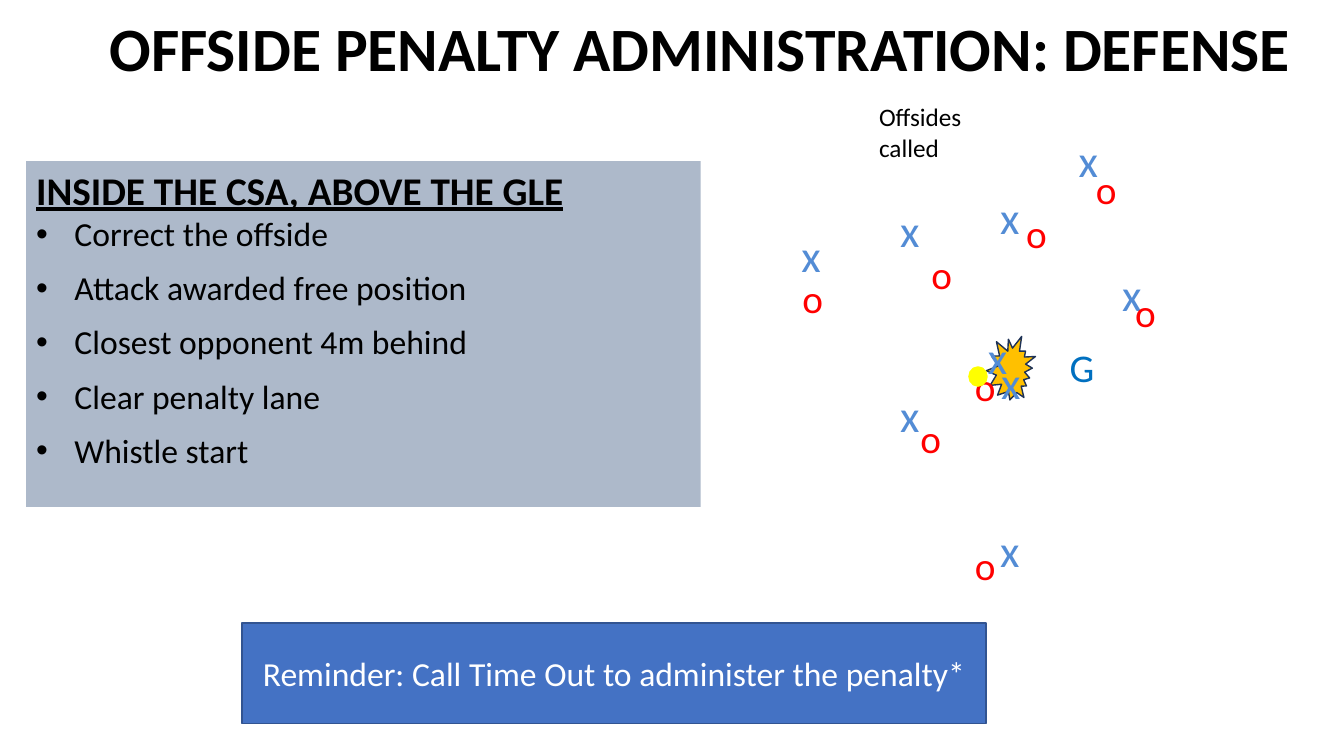
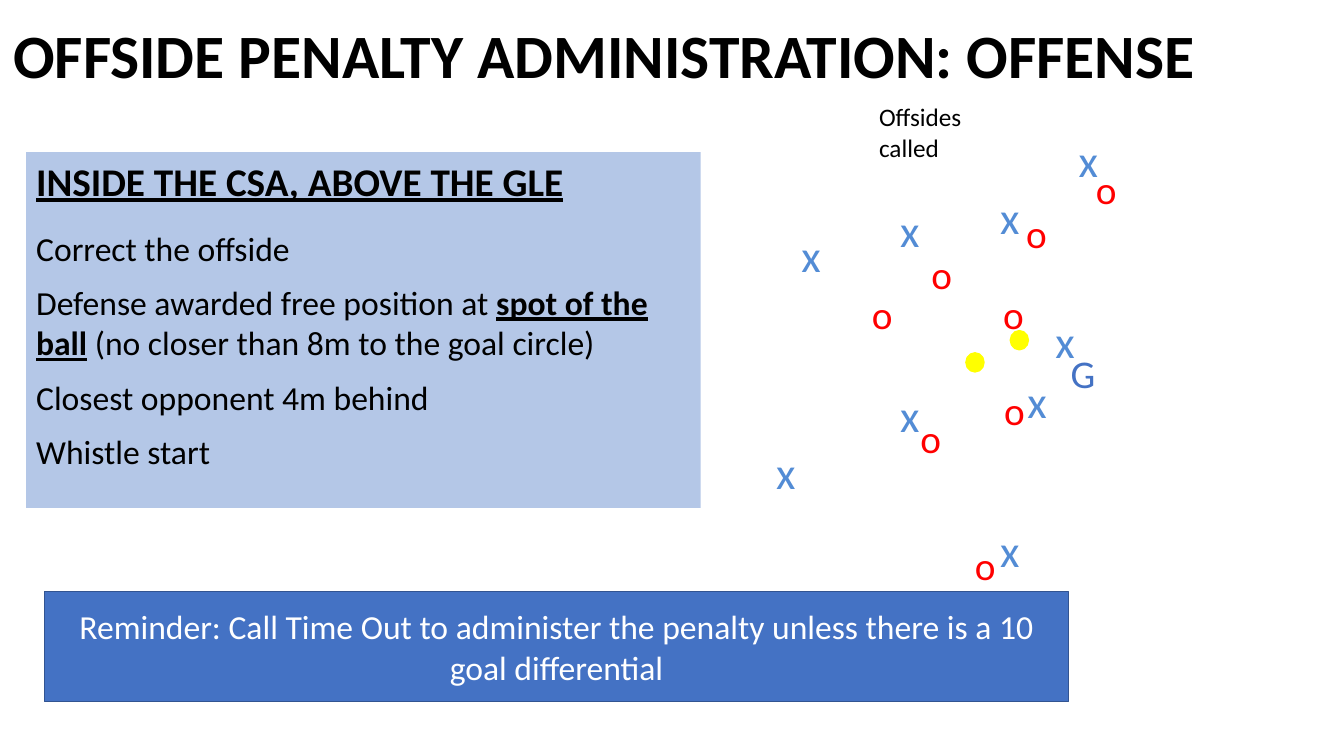
from lxml import etree
from pptx import Presentation
from pptx.dml.color import RGBColor
from pptx.enum.shapes import MSO_SHAPE as SHAPE
from pptx.enum.text import MSO_ANCHOR as ANCHOR, PP_ALIGN as ALIGN
from pptx.oxml.ns import qn
from pptx.util import Inches, Pt

# Shared style
FONT = "Calibri"
BLACK, WHITE = "000000", "FFFFFF"
BLUE, BLUE_EDGE = "4472C4", "325491"
YELLOW, GOLD, GOLD_EDGE = "FFFF00", "FFC000", "1E3256"
HEADING = "INSIDE THE CSA, ABOVE THE GLE"
INDENT = 0.38  # inches
GAP = 9.8      # points between items

# Player marks: colour, text size, box width, box height
MARKS = {
    "x": ("538CD5", 32, 0.45, 0.64),
    "o": ("FF0000", 28, 0.43, 0.57),
}
# Players standing in the same place on both slides
SHARED_PLAYERS = {
    "x": [(7.85, 2.21), (9.82, 1.83), (8.83, 3.8), (10.6, 1.27), (9.82, 5.14),
          (8.83, 1.96)],
    "o": [(9.14, 2.43), (10.77, 1.59), (9.03, 4.06), (9.57, 5.32), (10.08, 2.03)],
}

# Items are lists of (text, emphasised) runs
SLIDES = [
    dict(
        title="OFFSIDE PENALTY ADMINISTRATION: DEFENSE", title_at=(0.95, 0.13),
        panel=(0.26, 1.6, 6.69, 3.43), panel_fill="ADB9CA",
        bullets=True, first_gap=0,
        items=[
            [("Correct the offside", False)],
            [("Attack awarded free position", False)],
            [("Closest opponent 4m behind", False)],
            [("Clear penalty lane", False)],
            [("Whistle start", False)],
        ],
        reminder="Reminder: Call Time Out to administer the penalty*",
        reminder_at=(2.4, 6.18, 7.38, 1),
        players={"x": [(9.7, 3.22), (11.03, 2.6), (9.83, 3.47)],
                 "o": [(11.16, 2.81), (9.57, 3.55), (7.86, 2.67)]},
        goalie=(10.51, 3.36), goalie_color="0070C0",
        balls=[(9.61, 3.64)], burst=(9.73, 3.37, 0.61, 0.55),
    ),
    dict(
        title="OFFSIDE PENALTY ADMINISTRATION: OFFENSE", title_at=(0, 0.2),
        panel=(0.26, 1.51, 6.69, 3.53), panel_fill="B4C7E7",
        bullets=False, first_gap=17,
        items=[
            [("Correct the offside", False)],
            [("Defense awarded free position at ", False), ("spot of the ball", True),
             (" (no closer than 8m to the goal circle)", False)],
            [("Closest opponent 4m behind", False)],
            [("Whistle start", False)],
        ],
        reminder="Reminder: Call Time Out to administer the penalty "
                 "unless there is a 10 goal differential",
        reminder_at=(0.44, 5.87, 10.16, 1.09),
        players={"x": [(10.09, 3.66), (10.37, 3.06), (7.6, 4.36)],
                 "o": [(9.85, 2.83), (9.86, 3.78), (8.55, 2.83)]},
        goalie=(10.52, 3.42), goalie_color=BLUE,
        balls=[(10.02, 3.28), (9.58, 3.5)], burst=None,
    ),
]


def rgb(color):
    return RGBColor.from_string(color)


def add_run(p, text, size, color=BLACK, bold=False, underline=False):
    r = p.add_run()
    r.text = text
    f = r.font
    f.name, f.size, f.bold, f.underline = FONT, Pt(size), bold, underline
    f.color.rgb = rgb(color)


def add_text(s, box, text, size, color=BLACK, bold=False, align=ALIGN.LEFT):
    tf = s.shapes.add_textbox(*map(Inches, box)).text_frame
    tf.word_wrap = True
    p = tf.paragraphs[0]
    p.alignment = align
    add_run(p, text, size, color, bold)
    return p


def add_shape(s, kind, box, fill, line=None):
    sp = s.shapes.add_shape(kind, *map(Inches, box))
    sp.shadow.inherit = False
    sp.fill.solid()
    sp.fill.fore_color.rgb = rgb(fill)
    if line:
        sp.line.color.rgb = rgb(line)
        sp.line.width = Pt(1)
    else:
        sp.line.fill.background()
    sp.text_frame.word_wrap = True
    return sp


def add_bullet(p):
    pPr = p._p.get_or_add_pPr()
    pPr.set("marL", str(Inches(INDENT)))
    pPr.set("indent", str(-Inches(INDENT)))
    etree.SubElement(pPr, qn("a:buFont")).set("typeface", "Arial")
    etree.SubElement(pPr, qn("a:buChar")).set("char", "•")


def add_panel(s, d):
    tf = add_shape(s, SHAPE.RECTANGLE, d["panel"], d["panel_fill"]).text_frame
    tf.vertical_anchor = ANCHOR.TOP
    p = tf.paragraphs[0]
    p.alignment = ALIGN.LEFT
    add_run(p, HEADING, 28, bold=True, underline=True)
    for i, runs in enumerate(d["items"]):
        p = tf.add_paragraph()
        if d["bullets"]:
            add_bullet(p)
        p.alignment = ALIGN.LEFT
        p.space_before = Pt(GAP if i else d["first_gap"])
        for text, strong in runs:
            add_run(p, text, 24, bold=strong, underline=strong)


def add_reminder(s, d):
    tf = add_shape(s, SHAPE.RECTANGLE, d["reminder_at"], BLUE, BLUE_EDGE).text_frame
    tf.vertical_anchor = ANCHOR.MIDDLE
    p = tf.paragraphs[0]
    p.alignment = ALIGN.CENTER
    add_run(p, d["reminder"], 24, WHITE)


def add_field(s, d):
    if d["burst"]:
        add_shape(s, SHAPE.EXPLOSION2, d["burst"], GOLD, GOLD_EDGE).rotation = 306.9
    add_text(s, (8.62, 0.96, 1.04, 0.71), "Offsides called", 18)
    for mark, (color, size, w, h) in MARKS.items():
        for x, y in SHARED_PLAYERS[mark] + d["players"][mark]:
            add_text(s, (x, y, w, h), mark, size, color)
    add_text(s, (*d["goalie"], 0.54, 0.57), "G", 28, d["goalie_color"])
    for x, y in d["balls"]:
        add_shape(s, SHAPE.OVAL, (x, y, 0.18, 0.19), YELLOW, YELLOW)


def main():
    prs = Presentation()
    prs.slide_width, prs.slide_height = Inches(13.33), Inches(7.5)
    for d in SLIDES:
        s = prs.slides.add_slide(prs.slide_layouts[6])
        title = add_text(s, (*d["title_at"], 12, 1.11), d["title"], 44,
                         bold=True, align=ALIGN.CENTER)
        title.line_spacing = 0.9
        add_panel(s, d)
        add_reminder(s, d)
        add_field(s, d)
    prs.save("out.pptx")


if __name__ == "__main__":
    main()
